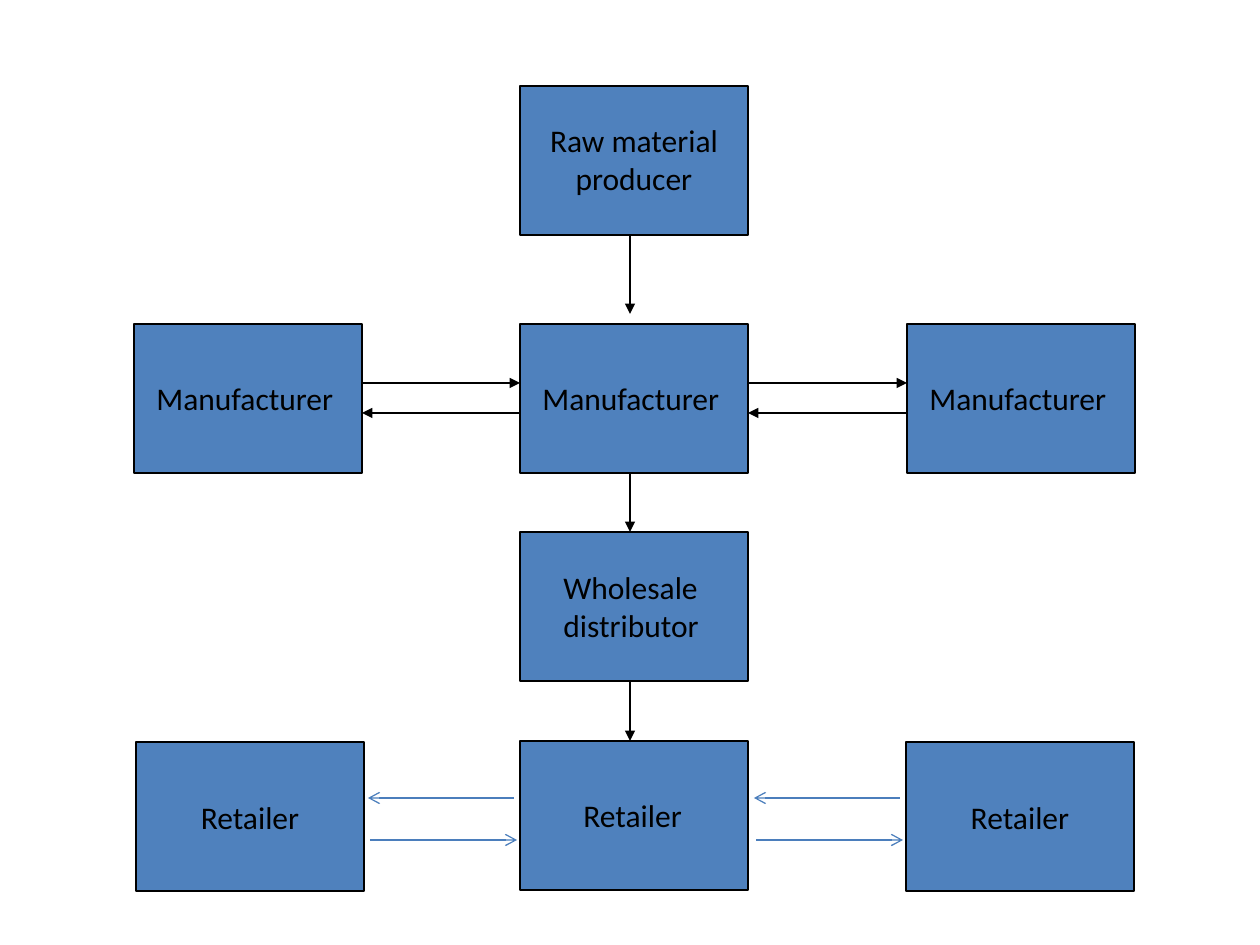
from dataclasses import dataclass

from lxml.etree import SubElement
from pptx import Presentation
from pptx.dml.color import RGBColor
from pptx.enum.shapes import MSO_CONNECTOR, MSO_SHAPE
from pptx.enum.text import MSO_ANCHOR, PP_ALIGN
from pptx.oxml.ns import qn
from pptx.util import Emu, Pt


@dataclass(frozen=True)
class Theme:
    box: RGBColor = RGBColor(0x4F, 0x81, 0xBD)
    ink: RGBColor = RGBColor(0x00, 0x00, 0x00)
    retail_arrow: RGBColor = RGBColor(0x4B, 0x7E, 0xBC)
    font: str = "Calibri"
    size: Pt = Pt(18)
    line: Pt = Pt(0.75)


theme = Theme()
PX_PER_INCH = 126


def px(length):
    return Emu(round(length * 914400 / PX_PER_INCH))


def write(shape, lines, alignment):
    frame = shape.text_frame
    frame.word_wrap = False
    frame.text = "\n".join(lines)
    for paragraph in frame.paragraphs:
        paragraph.alignment = alignment
        paragraph.font.name = theme.font
        paragraph.font.size = theme.size
        paragraph.font.color.rgb = theme.ink


presentation = Presentation()
presentation.slide_width = px(1260)
presentation.slide_height = px(945)
slide = presentation.slides.add_slide(presentation.slide_layouts[6])

# Boxes: left, top, and the label of those that carry their own text
BOX_WIDTH, BOX_HEIGHT = 228, 149
LEFT, CENTRE, RIGHT = 134, 520, 907
RAW_TOP, MAKER_TOP, WHOLESALE_TOP, RETAIL_TOP = 86, 324, 532, 741
boxes = [
    (CENTRE, RAW_TOP, None),
    (CENTRE, RETAIL_TOP, None),
    (CENTRE, WHOLESALE_TOP, None),
    (CENTRE, MAKER_TOP, None),
    (RIGHT, MAKER_TOP, None),
    (LEFT, MAKER_TOP, None),
    (136, 742, "Retailer"),
    (906, 742, "Retailer"),
]
for left, top, label in boxes:
    box = slide.shapes.add_shape(
        MSO_SHAPE.RECTANGLE, px(left), px(top), px(BOX_WIDTH), px(BOX_HEIGHT))
    box.shadow.inherit = False
    box.fill.solid()
    box.fill.fore_color.rgb = theme.box
    box.line.color.rgb = theme.ink
    box.line.width = theme.line
    if label:
        box.text_frame.vertical_anchor = MSO_ANCHOR.MIDDLE
        write(box, [label], PP_ALIGN.CENTER)

# Labels laid over the other boxes
labels = [
    (530, 115, 208, 88, ["Raw material", "producer"], PP_ALIGN.CENTER),
    (551, 562, 168, 88, ["Wholesale", "distributor"], PP_ALIGN.LEFT),
    (571, 790, 131, 50, ["Retailer"], PP_ALIGN.LEFT),
]
for box_left in (LEFT, CENTRE, RIGHT):
    labels.append((box_left + 10, 373, 209, 50, ["Manufacturer"], PP_ALIGN.LEFT))
for left, top, width, height, lines, alignment in labels:
    label_box = slide.shapes.add_textbox(px(left), px(top), px(width), px(height))
    write(label_box, lines, alignment)

# Arrows: start x, start y, end x, end y, colour, head
SUPPLY = (theme.ink, "triangle")
RETAIL = (theme.retail_arrow, "arrow")
arrows = [
    (630, RAW_TOP + BOX_HEIGHT, 630, 314, *SUPPLY),
    (630, MAKER_TOP + BOX_HEIGHT, 630, WHOLESALE_TOP, *SUPPLY),
    (630, WHOLESALE_TOP + BOX_HEIGHT, 630, RETAIL_TOP, *SUPPLY),
]
for box_left, next_left in ((LEFT, CENTRE), (CENTRE, RIGHT)):
    edge = box_left + BOX_WIDTH
    arrows += [
        (edge, 383, next_left, 383, *SUPPLY),
        (next_left, 413, edge, 413, *SUPPLY),
        (edge + 152, 798, edge + 6, 798, *RETAIL),
        (edge + 8, 840, edge + 155, 840, *RETAIL),
    ]
for start_x, start_y, end_x, end_y, colour, head in arrows:
    arrow = slide.shapes.add_connector(
        MSO_CONNECTOR.STRAIGHT, px(start_x), px(start_y), px(end_x), px(end_y))
    arrow.line.color.rgb = colour
    arrow.line.width = theme.line
    SubElement(arrow.line._get_or_add_ln(), qn("a:tailEnd"), type=head)
    SubElement(arrow._element.spPr, qn("a:effectLst"))

presentation.save("out.pptx")
